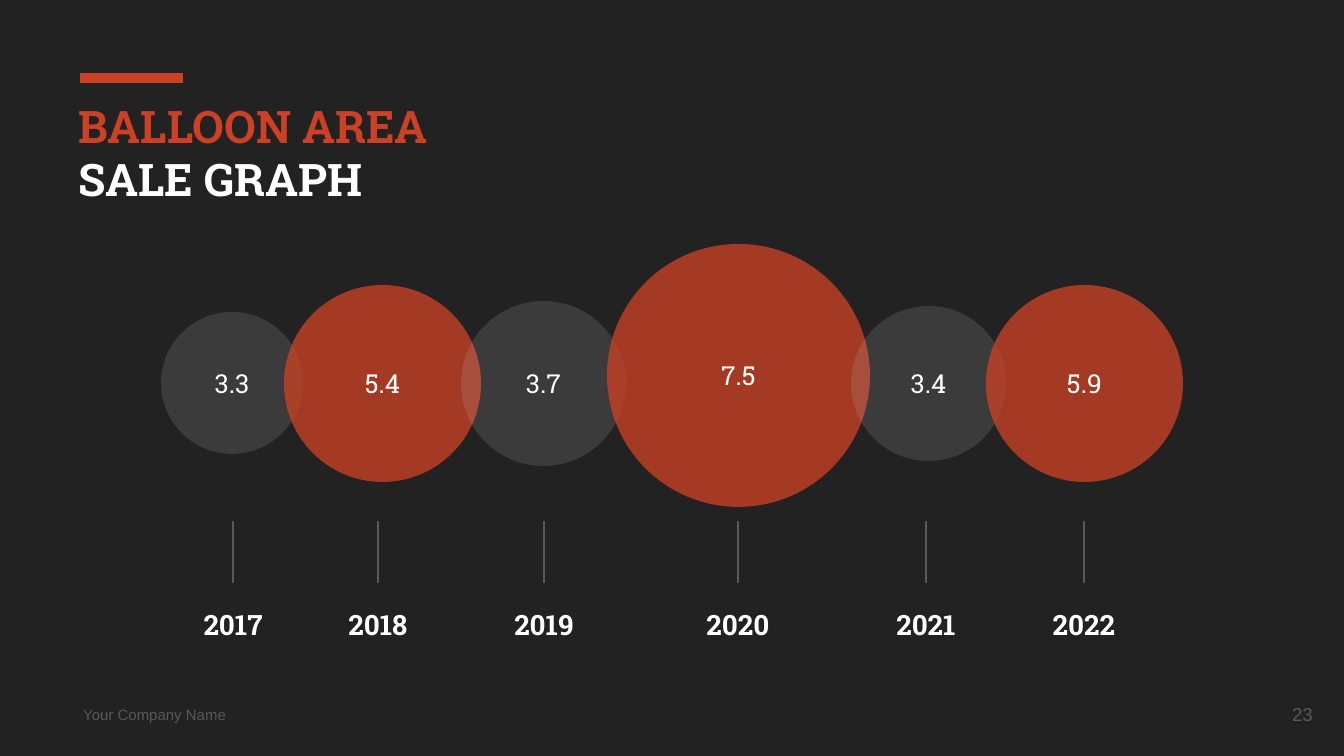
"""Build the balloon area sale graph slide."""
from lxml import etree
from pptx import Presentation, util as u
from pptx.dml.color import RGBColor
from pptx.enum import shapes, text
from pptx.oxml.ns import qn

PX = 9144000 / 1344
RED, SILVER, GREY, WHITE = "CC4125", "B7B7B7", "595959", "FFFFFF"
SLAB = "Roboto Slab"


def px(*lengths):
    return [u.Emu(round(n * PX)) for n in lengths]


def put_text(sp, lines, colors, size=14, font=SLAB, bold=False,
             align=text.PP_ALIGN.CENTER, anchor=text.MSO_ANCHOR.MIDDLE):
    tf = sp.text_frame
    tf.word_wrap = True
    tf.vertical_anchor = anchor
    tf.margin_left = tf.margin_right = tf.margin_top = tf.margin_bottom = u.Inches(0.1)
    for i, (line, color) in enumerate(zip(lines, colors)):
        p = tf.add_paragraph() if i else tf.paragraphs[0]
        p.alignment = align
        r = p.add_run()
        r.text = line
        r.font.name, r.font.size, r.font.bold = font, u.Pt(size), bold
        r.font.color.rgb = RGBColor.from_string(color)


prs = Presentation()
prs.slide_width, prs.slide_height = px(1344, 756)
s = prs.slides.add_slide(prs.slide_layouts[6])
s.background.fill.solid()
s.background.fill.fore_color.rgb = RGBColor.from_string("222222")

bar = s.shapes.add_shape(shapes.MSO_SHAPE.RECTANGLE, *px(80, 73, 103, 10))
bar.shadow.inherit = False
bar.fill.solid()
bar.fill.fore_color.rgb = RGBColor.from_string(RED)
bar.line.fill.background()

footer = s.shapes.add_textbox(*px(70, 697, 224, 35))
put_text(footer, ["Your Company Name"], [GREY], size=8, font="Arial",
         align=text.PP_ALIGN.LEFT)

balloons = [
    ("3.3", 161, 312, 142, SILVER, 17),
    ("5.4", 284, 285, 197, RED, 77),
    ("3.7", 461, 301, 165, SILVER, 17),
    ("7.5", 607, 244, 263, RED, 77),
    ("3.4", 851, 306, 155, SILVER, 17),
    ("5.9", 986, 285, 197, RED, 77),
]
for value, x, y, d, color, alpha in balloons:
    sp = s.shapes.add_shape(shapes.MSO_SHAPE.OVAL, *px(x, y, d, d))
    sp.shadow.inherit = False
    sp.fill.solid()
    sp.fill.fore_color.rgb = RGBColor.from_string(color)
    clr = sp._element.spPr.find(qn("a:solidFill"))[0]
    etree.SubElement(clr, qn("a:alpha"), val=str(alpha * 1000))
    sp.line.fill.background()
    put_text(sp, [value], [WHITE])

for year, x in enumerate([233, 378, 544, 738, 926, 1084], 2017):
    tick = s.shapes.add_connector(shapes.MSO_CONNECTOR.STRAIGHT, *px(x, 521, x, 583))
    tick.line.color.rgb = RGBColor.from_string(GREY)
    tick.line.width = u.Pt(0.75)
    etree.SubElement(tick._element.spPr, qn("a:effectLst"))
    label = s.shapes.add_textbox(*px(x - 70, 607, 140, 34))
    put_text(label, [str(year)], [WHITE], size=15, bold=True)

number = s.shapes.add_textbox(*px(1246, 685, 80, 58))
put_text(number, ["23"], [GREY], size=10, font="Arial", align=text.PP_ALIGN.RIGHT)

title = s.shapes.add_textbox(*px(65, 85, 606, 156))
put_text(title, ["BALLOON AREA", "SALE GRAPH"], [RED, WHITE], size=24, bold=True,
         align=text.PP_ALIGN.LEFT, anchor=text.MSO_ANCHOR.TOP)

prs.save("out.pptx")
